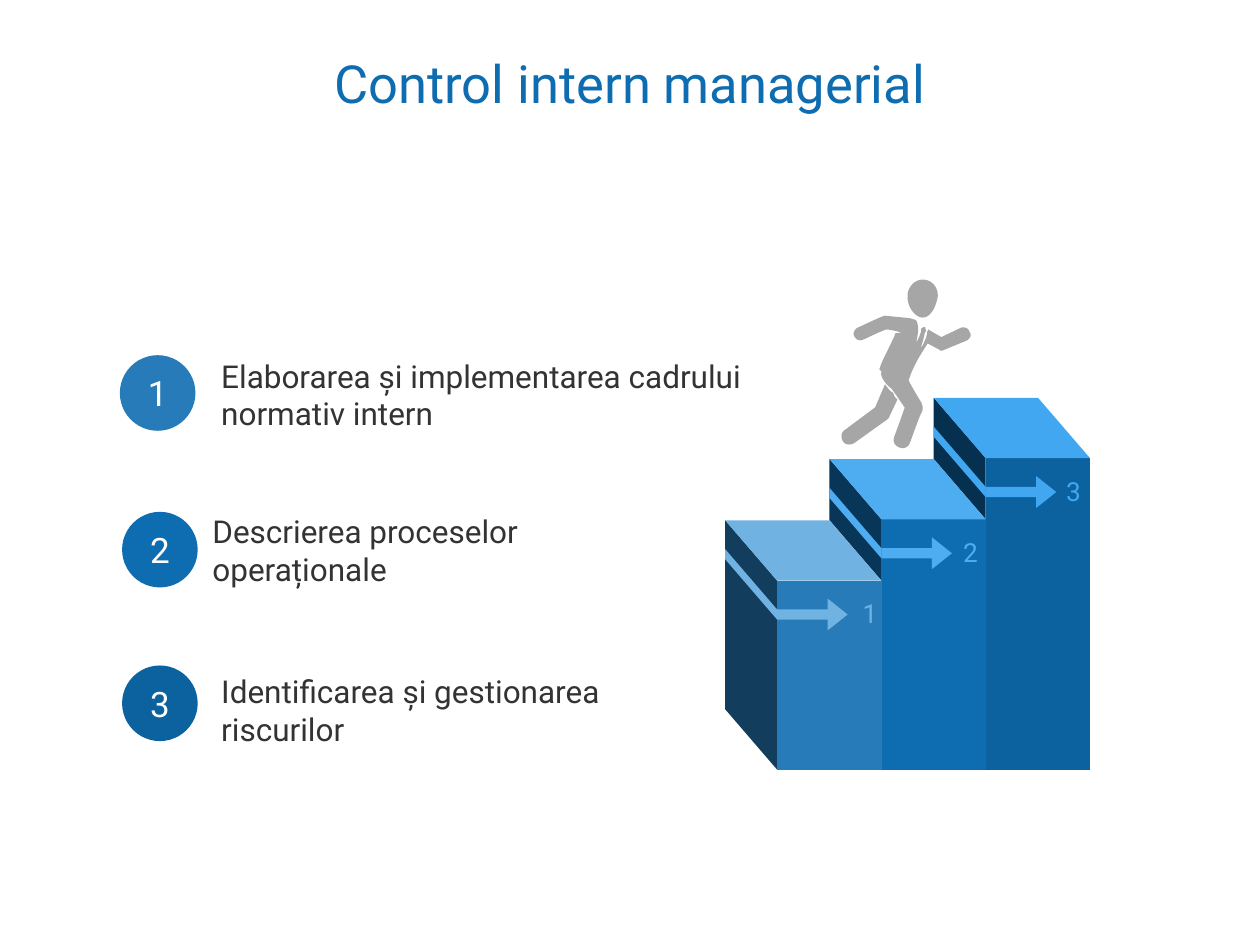
import pptx
import pptx.util
import pptx.dml.color
import pptx.enum.shapes
import pptx.enum.text

Pt = pptx.util.Pt
RGB = pptx.dml.color.RGBColor
ANCHOR = pptx.enum.text.MSO_ANCHOR
ALIGN = pptx.enum.text.PP_ALIGN
KIND = pptx.enum.shapes.MSO_SHAPE

FONT = "Roboto"
WHITE = RGB(0xFF, 0xFF, 0xFF)
INK = RGB(0x33, 0x33, 0x33)
GREY = RGB(0xA6, 0xA6, 0xA6)
FRONT = [RGB(0x26, 0x7B, 0xB8), RGB(0x0E, 0x6D, 0xB1), RGB(0x0C, 0x61, 0x9F)]
LIGHT = [RGB(0x70, 0xB2, 0xE1), RGB(0x4E, 0xAD, 0xF1), RGB(0x42, 0xA7, 0xF1)]
DARK = [RGB(0x13, 0x3D, 0x5C), RGB(0x07, 0x36, 0x58), RGB(0x06, 0x30, 0x50)]

deck = pptx.Presentation()
deck.slide_width, deck.slide_height = Pt(720), Pt(540)
slide = deck.slides.add_slide(deck.slide_layouts[6])
shapes = slide.shapes


def outline(points, color):
    spots = [(Pt(x), Pt(y)) for x, y in points]
    build = shapes.build_freeform(*spots[0], scale=1.0)
    build.add_line_segments(spots[1:], close=True)
    shape = build.convert_to_shape()
    shape.shadow.inherit = False
    shape.fill.solid()
    shape.fill.fore_color.rgb = color
    shape.line.fill.background()
    return shape


def write(shape, text, size, color, align=ALIGN.LEFT, anchor=ANCHOR.MIDDLE):
    frame = shape.text_frame
    frame.word_wrap = True
    frame.vertical_anchor = anchor
    para = frame.paragraphs[0]
    para.alignment = align
    run = para.add_run()
    run.text = text
    run.font.size = Pt(size)
    run.font.name = FONT
    run.font.color.rgb = color
    return para


title = shapes.add_textbox(Pt(45), Pt(27), Pt(630), Pt(40.5))
write(title, "Control intern managerial", 30, FRONT[1], ALIGN.CENTER).space_before = Pt(9)

WIDE, RISE, BASE = 59.6, 35, 439.8
DEPTH, DROP = 29.7, 34.5
BAND, THICK = 16.5, 5.8
ARROW = [(0, 16.5), (28.8, 16.5), (28.8, 10.2), (40.3, 19.4),
         (28.8, 28.5), (28.8, 22.3), (0, 22.3)]
SHIFT = [41.8, 39.6, 38.9]

for i in (2, 1, 0):
    x, y = 444.1 + WIDE * i, 331.8 - RISE * i
    back, high = x - DEPTH, y - DROP
    low = y + RISE if i else BASE
    outline([(x, y), (back, high), (back, low - DROP), (x, low)], DARK[i])
    outline([(x, y), (x + WIDE, y), (x + WIDE, BASE), (x, BASE)], FRONT[i])
    outline([(back + WIDE, high), (back, high), (x, y), (x + WIDE, y)], LIGHT[i])
    outline([(x, y + BAND), (back, high + BAND),
             (back, high + BAND + THICK), (x, y + BAND + THICK)], LIGHT[i])
    outline([(x + dx, y + dy) for dx, dy in ARROW], LIGHT[i])
    label = shapes.add_textbox(Pt(x + SHIFT[i]), Pt(y + 6), Pt(21), Pt(25.5))
    write(label, str(i + 1), 15, LIGHT[i], anchor=ANCHOR.TOP)

HEAD = [(63, 32), (70, 32, 73, 23, 74, 16), (75, 9, 70, 3, 64, 2),
        (57, 1, 51, 6, 50, 14), (50, 25, 58, 32, 63, 32)]
LEG = [(37, 90), (34, 89, 32, 86, 30, 84), (24, 103), (2, 123),
       (-1, 125, -1, 129, 1, 132), (3, 135, 7, 135, 10, 133), (34, 112),
       (35, 111, 36, 110, 36, 109), (41, 95), (39, 94, 38, 92, 37, 90)]
ARM = [(80, 58), (97, 49), (100, 47, 101, 44, 99, 42), (98, 39, 95, 38, 92, 39),
       (77, 48), (66, 43), (66, 43, 66, 46, 66, 48), (64, 53), (76, 58),
       (77, 59, 79, 59, 80, 58)]
BODY = [(51, 80), (55, 62, 64, 50, 64, 47), (64, 42, 63, 39, 63, 39), (62, 40),
        (62, 48, 58, 54, 58, 54), (58, 54, 60, 45, 60, 42),
        (60, 41, 61, 40, 61, 40), (60, 37), (59, 37), (57, 38),
        (57, 38, 57, 40, 57, 41), (57, 41, 56, 46, 54, 50),
        (56, 37, 53, 33, 52, 32), (47, 31), (43, 31, 36, 31, 27, 31),
        (26, 31, 6, 43, 6, 43), (4, 45, 3, 48, 5, 50), (7, 53, 10, 53, 13, 51),
        (13, 51, 28, 42, 29, 42), (30, 41, 42, 43, 42, 43), (37, 44),
        (35, 52, 28, 67, 27, 74), (27, 74, 29, 75, 29, 76),
        (28, 77, 30, 83, 38, 88), (40, 90, 50, 102, 50, 102),
        (50, 103, 44, 126, 44, 126), (43, 130, 45, 133, 49, 134),
        (53, 135, 56, 133, 57, 129), (57, 129, 63, 105, 64, 104),
        (65, 100, 63, 98, 63, 97), (62, 96, 51, 81, 51, 80)]

for part in (HEAD, LEG, ARM, BODY):
    trace = [part[0]]
    for step in part[1:]:
        if len(step) == 2:
            trace.append(step)
            continue
        ends = [trace[-1], step[:2], step[2:4], step[4:]]
        for n in range(1, 9):
            t = n / 8
            mix = ((1 - t) ** 3, 3 * t * (1 - t) ** 2, 3 * t * t * (1 - t), t ** 3)
            trace.append(tuple(sum(m * p[k] for m, p in zip(mix, ends)) for k in (0, 1)))
    limb = outline([(482.4 + x * 0.72, 158.4 + y * 0.72) for x, y in trace], GREY)
    limb.rotation = 5.6

ITEMS = [
    ("Elaborarea și implementarea cadrului normativ intern", 68.5, 203, 121, 211.7, 323.3, 27.4),
    ("Descrierea proceselor operaționale", 69.8, 292.5, 116, 306, 280, 16.6),
    ("Identificarea și gestionarea riscurilor", 69.8, 380.3, 121, 397.4, 265, 16.6),
]
for i, (text, x, y, left, top, wide, tall) in enumerate(ITEMS):
    disc = shapes.add_shape(KIND.OVAL, Pt(x), Pt(y), Pt(43.2), Pt(43.2))
    disc.shadow.inherit = False
    disc.fill.solid()
    disc.fill.fore_color.rgb = FRONT[i]
    disc.line.fill.background()
    write(disc, str(i + 1), 20, WHITE, ALIGN.CENTER)
    box = shapes.add_textbox(Pt(left), Pt(top), Pt(wide), Pt(tall))
    frame = box.text_frame
    frame.margin_left = frame.margin_right = Pt(5.4)
    frame.margin_top = frame.margin_bottom = Pt(2.7)
    write(box, text, 18, INK).space_after = Pt(6)

deck.save("out.pptx")
